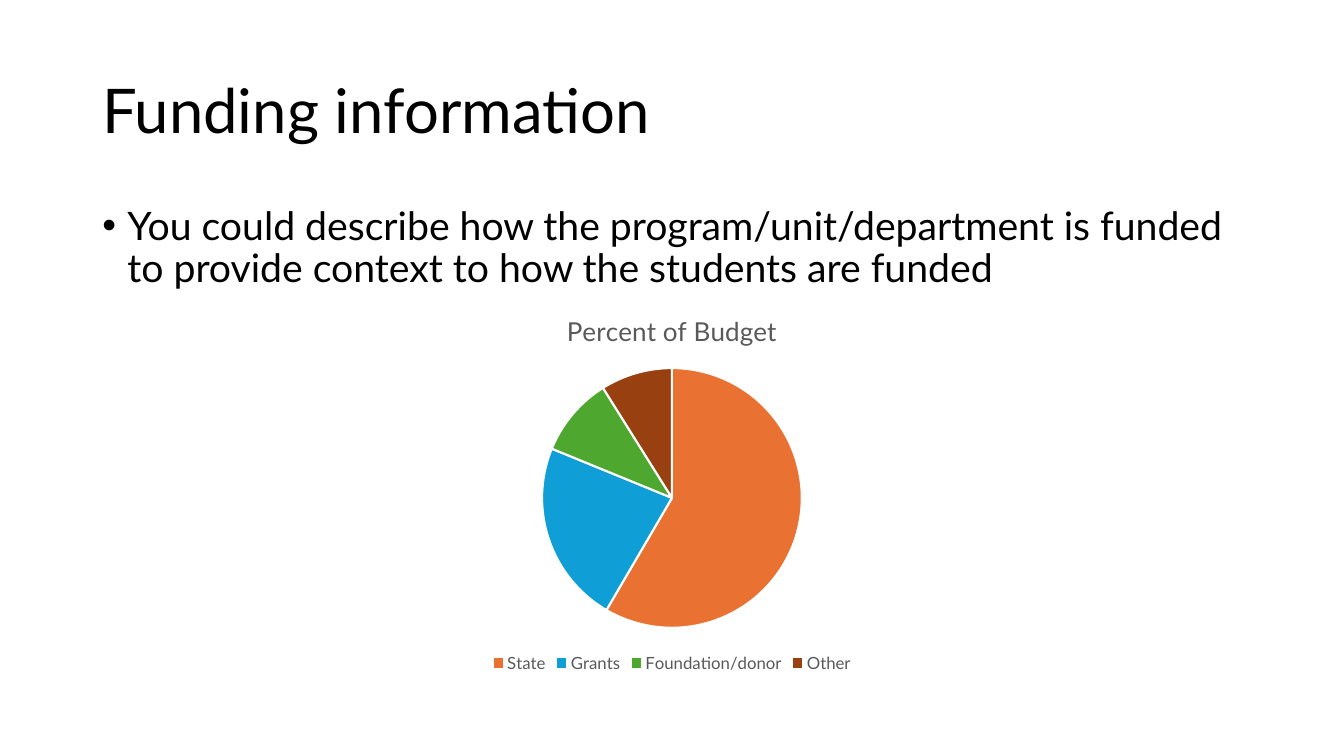
from dataclasses import dataclass

from lxml import etree
from pptx import Presentation
from pptx import util as u
from pptx.chart import data as chart_data
from pptx.dml.color import RGBColor
from pptx.enum import chart as chart_enum, text
from pptx.oxml import ns

FONT = "Lato"
BLACK = RGBColor(0x00, 0x00, 0x00)
WHITE = RGBColor(0xFF, 0xFF, 0xFF)
GREY = RGBColor(0x59, 0x59, 0x59)
ORANGE = RGBColor(0xE9, 0x71, 0x32)
BLUE = RGBColor(0x0F, 0x9E, 0xD5)
GREEN = RGBColor(0x4E, 0xA7, 0x2E)
BROWN = RGBColor(0x99, 0x40, 0x10)

MARGIN, CONTENT_WIDTH = 66, 828


@dataclass(frozen=True)
class TextBlock:
    wording: str
    top: float
    height: float
    size: float
    anchor: text.MSO_ANCHOR
    space_before: float = 0
    bullet_indent: float = 0


@dataclass(frozen=True)
class FundingSource:
    name: str
    percent: int
    color: RGBColor


TEXT_BLOCKS = [
    TextBlock("Funding information", 28.75, 104.4, 44, text.MSO_ANCHOR.MIDDLE),
    TextBlock("You could describe how the program/unit/department is funded "
              "to provide context to how the students are funded",
              143.75, 342.7, 28, text.MSO_ANCHOR.TOP,
              space_before=10, bullet_indent=18),
]

FUNDING_SOURCES = [
    FundingSource("State", 59, ORANGE),
    FundingSource("Grants", 23, BLUE),
    FundingSource("Foundation/donor", 10, GREEN),
    FundingSource("Other", 9, BROWN),
]


def style_font(font, size: float, color: RGBColor) -> None:
    font.name = FONT
    font.size = u.Pt(size)
    font.bold = False
    font.color.rgb = color


def add_bullet(paragraph, indent: float) -> None:
    properties = paragraph._p.get_or_add_pPr()
    properties.set("marL", str(u.Pt(indent)))
    properties.set("indent", str(-u.Pt(indent)))
    etree.SubElement(properties, ns.qn("a:buFont")).set("typeface", "Arial")
    etree.SubElement(properties, ns.qn("a:buChar")).set("char", "•")


def add_text_block(slide, block: TextBlock) -> None:
    box = slide.shapes.add_textbox(u.Pt(MARGIN), u.Pt(block.top),
                                   u.Pt(CONTENT_WIDTH), u.Pt(block.height))
    frame = box.text_frame
    frame.word_wrap = True
    frame.vertical_anchor = block.anchor
    frame.text = block.wording
    paragraph = frame.paragraphs[0]
    paragraph.line_spacing = 0.9
    paragraph.space_before = u.Pt(block.space_before)
    if block.bullet_indent:
        add_bullet(paragraph, block.bullet_indent)
    style_font(paragraph.runs[0].font, block.size, BLACK)


def add_budget_pie(slide, title: str, sources: list[FundingSource]) -> None:
    budget = chart_data.CategoryChartData()
    budget.categories = [source.name for source in sources]
    budget.add_series(title, [source.percent for source in sources])
    pie = slide.shapes.add_chart(
        chart_enum.XL_CHART_TYPE.PIE,
        u.Pt(242), u.Pt(210), u.Pt(476), u.Pt(273.6), budget).chart
    style_font(pie.font, 10, BLACK)

    # Title and legend
    pie.has_title = True
    heading = pie.chart_title.text_frame
    heading.text = title
    style_font(heading.paragraphs[0].runs[0].font, 18.6, GREY)
    pie.chart_title.include_in_layout = False
    pie.has_legend = True
    pie.legend.position = chart_enum.XL_LEGEND_POSITION.BOTTOM
    pie.legend.include_in_layout = False
    style_font(pie.legend.font, 12, GREY)

    # Slices
    pie.plots[0].vary_by_categories = True
    for index, source in enumerate(sources):
        slice_format = pie.plots[0].series[0].points[index].format
        slice_format.fill.solid()
        slice_format.fill.fore_color.rgb = source.color
        slice_format.line.color.rgb = WHITE
        slice_format.line.width = u.Pt(1.5)


def main() -> None:
    deck = Presentation()
    deck.slide_width, deck.slide_height = u.Pt(960), u.Pt(540)
    slide = deck.slides.add_slide(deck.slide_layouts[6])
    for block in TEXT_BLOCKS:
        add_text_block(slide, block)
    add_budget_pie(slide, "Percent of Budget", FUNDING_SOURCES)
    deck.save("out.pptx")


if __name__ == "__main__":
    main()
